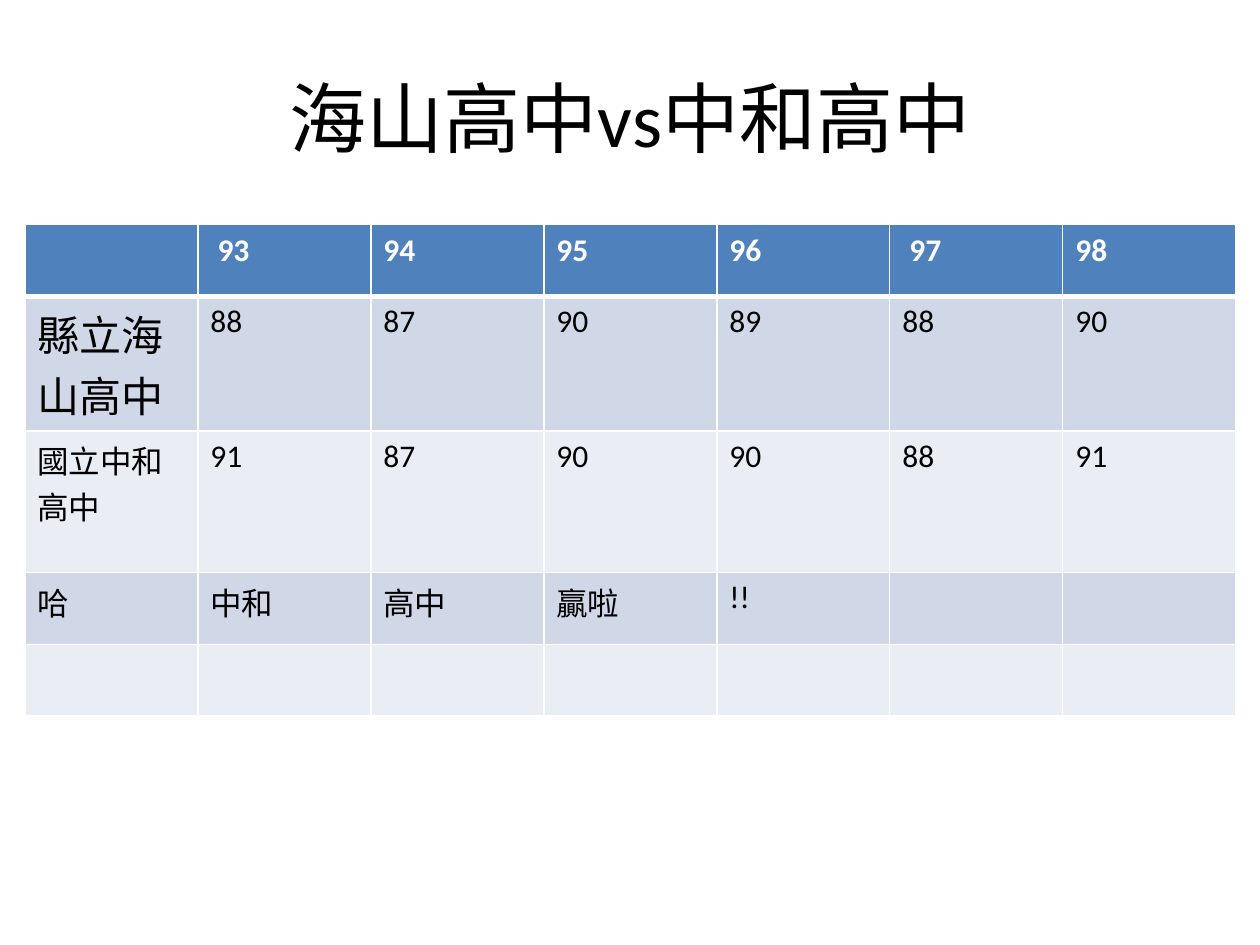
from lxml.etree import SubElement
from pptx import Presentation
from pptx.dml.color import RGBColor
from pptx.enum.text import MSO_ANCHOR, PP_ALIGN
from pptx.oxml.ns import qn
from pptx.util import Pt

TITLE = "海山高中vs中和高中"
SCORES = [
    ["", " 93", "94", "95", "96", " 97", "98"],
    ["縣立海山高中", "88", "87", "90", "89", "88", "90"],
    ["國立中和高中", "91", "87", "90", "90", "88", "91"],
    ["哈", "中和", "高中", "贏啦", "!!", "", ""],
    ["", "", "", "", "", "", ""],
]
ROW_HEIGHTS = [41, 71.3, 81, 41, 41]
COL_WIDTH = 98.85
TABLE_LEFT, TABLE_TOP = 14.2, 128.4

THEME = {
    "font": "Calibri",
    "title": 44, "school": 24, "body": 18,
    "text": "000000", "white": "FFFFFF",
    "header": "4F81BD", "bands": ["D0D8E8", "E9EDF4"],
    "line": 1, "header_line": 3,
}


def rgb(name):
    return RGBColor.from_string(name)


def format_font(font, size, color, bold=False):
    values = {"name": THEME["font"], "size": Pt(size), "bold": bold}
    for key, value in values.items():
        setattr(font, key, value)
    font.color.rgb = rgb(color)


def add_borders(cell, top, bottom):
    """Draw white cell borders; top and bottom are widths in points."""
    tc_pr = cell._tc.get_or_add_tcPr()
    side = THEME["line"]
    for tag, width in zip(("lnL", "lnR", "lnT", "lnB"), (side, side, top, bottom)):
        ln = SubElement(tc_pr, qn(f"a:{tag}"), w=str(Pt(width)))
        fill = SubElement(ln, qn("a:solidFill"))
        SubElement(fill, qn("a:srgbClr"), val=THEME["white"])


def add_title(s):
    title = s.shapes.title
    box = {"left": 36, "top": 21.6, "width": 648, "height": 90}
    for key, value in box.items():
        setattr(title, key, Pt(value))
    tf = title.text_frame
    tf.text = TITLE
    tf.vertical_anchor = MSO_ANCHOR.MIDDLE
    p = tf.paragraphs[0]
    p.alignment = PP_ALIGN.CENTER
    format_font(p.runs[0].font, THEME["title"], THEME["text"])


def add_scores(s):
    n_rows, n_cols = len(SCORES), len(SCORES[0])
    table = s.shapes.add_table(
        n_rows, n_cols, Pt(TABLE_LEFT), Pt(TABLE_TOP),
        Pt(COL_WIDTH * n_cols), Pt(sum(ROW_HEIGHTS))).table
    for col in table.columns:
        col.width = Pt(COL_WIDTH)
    for i, (values, height) in enumerate(zip(SCORES, ROW_HEIGHTS)):
        table.rows[i].height = Pt(height)
        header = i == 0
        fill = THEME["header"] if header else THEME["bands"][(i - 1) % 2]
        color = THEME["white"] if header else THEME["text"]
        for j, value in enumerate(values):
            cell = table.cell(i, j)
            add_borders(cell, THEME["header_line" if i == 1 else "line"],
                        THEME["header_line" if header else "line"])
            cell.fill.solid()
            cell.fill.fore_color.rgb = rgb(fill)
            if value:
                cell.text = value
                size = THEME["school" if (i, j) == (1, 0) else "body"]
                format_font(cell.text_frame.paragraphs[0].runs[0].font,
                            size, color, bold=header)


def main():
    prs = Presentation()
    prs.slide_width, prs.slide_height = Pt(720), Pt(540)
    s = prs.slides.add_slide(prs.slide_layouts[5])
    add_title(s)
    add_scores(s)
    prs.save("out.pptx")


if __name__ == "__main__":
    main()
